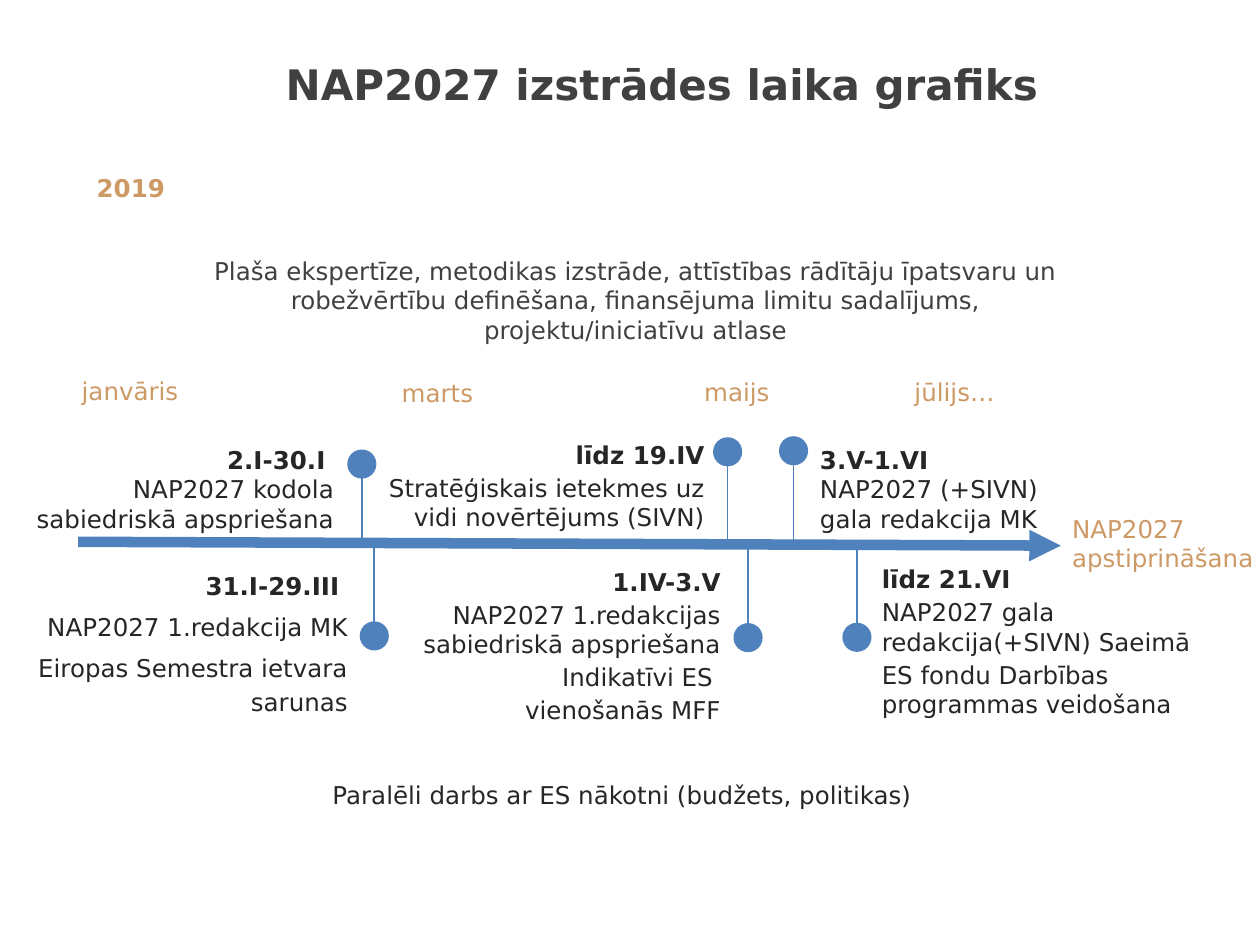
from dataclasses import dataclass

from lxml.etree import SubElement
from pptx import Presentation
from pptx.dml.color import RGBColor
from pptx.enum.shapes import MSO_CONNECTOR as Connector, MSO_SHAPE as Shape
from pptx.enum.text import MSO_AUTO_SIZE as AutoSize, PP_ALIGN as Align
from pptx.oxml.ns import qn
from pptx.util import Pt

COLORS = {"title": "404040", "body": "262626", "accent": "CD9965", "axis": "4F81BD"}
FONT = "DejaVu Sans"
AXIS_START = (44.6, 309.6)
AXIS_END = (606.2, 311.8)
DOT_SIZE = 14.4


@dataclass(frozen=True)
class Label:
    box: tuple[float, float, float, float]  # left, top, width, height
    paragraphs: tuple[str, ...]
    color: str = "body"
    align: Align = Align.LEFT
    size: float = 14
    bold_first: bool = False
    line_spacing: float = 1.0
    before: float = 0
    after: float = 0


@dataclass(frozen=True)
class Milestone:
    x: float
    dot_y: float
    label: Label


def milestone(x: float, dot_y: float, box: tuple, paragraphs: tuple, **style) -> Milestone:
    return Milestone(x, dot_y, Label(box, paragraphs, bold_first=True, **style))


MILESTONES = (
    milestone(206.8, 265.2, (3.6, 250.6, 194.4, 58.3),
              ("2.I-30.I ", "NAP2027 kodola sabiedriskā apspriešana"), align=Align.RIGHT),
    milestone(213.9, 363.4, (-0.7, 320.4, 206.6, 93.6),
              ("31.I-29.III ", "NAP2027 1.redakcija MK", "Eiropas Semestra ietvara sarunas"),
              align=Align.RIGHT, line_spacing=1.15, before=2, after=2),
    milestone(415.8, 258.2, (202.3, 247.7, 207.4, 60.5),
              ("līdz 19.IV", "Stratēģiskais ietekmes uz vidi novērtējums (SIVN)"),
              align=Align.RIGHT, before=2),
    milestone(427.5, 364.4, (181.4, 320.4, 237.6, 97.9),
              ("1.IV-3.V", "NAP2027 1.redakcijas sabiedriskā apspriešana",
               "Indikatīvi ES ", "vienošanās MFF"), align=Align.RIGHT, before=2),
    milestone(453.5, 257.6, (461.5, 250.6, 158.4, 58.3),
              ("3.V-1.VI", "NAP2027 (+SIVN) gala redakcija MK")),
    milestone(489.7, 364.2, (496.8, 319, 205.9, 96.5),
              ("līdz 21.VI", "NAP2027 gala redakcija(+SIVN) Saeimā",
               "ES fondu Darbības programmas veidošana"), before=2),
)

MONTHS = (("janvāris", 39.6, 209.5), ("marts", 222.5, 210.6),
          ("maijs", 395.3, 210.2), ("jūlijs…", 515.5, 210.2))

LABELS = (
    Label((156.2, 30.2, 527.8, 81.4), ("NAP2027 izstrādes laika grafiks",),
          "title", size=24, bold_first=True),
    Label((48.2, 93.6, 67, 24.5), ("2019",), "accent",
          bold_first=True, line_spacing=1.1, after=6),
    Label((115.2, 142.6, 496.1, 58.3),
          ("Plaša ekspertīze, metodikas izstrāde, attīstības rādītāju īpatsvaru un "
           "robežvērtību definēšana, finansējuma limitu sadalījums, "
           "projektu/iniciatīvu atlase",), "title", Align.CENTER),
    Label((605.5, 290.2, 121.7, 41), ("NAP2027 apstiprināšana",), "accent"),
    Label((182.9, 442.1, 414.7, 24.5),
          ("Paralēli darbs ar ES nākotni (budžets, politikas)",)),
    *(Label((left, top, 84.2, 24.5), (month,), "accent", line_spacing=1.1, after=6)
      for month, left, top in MONTHS),
)


def rgb(name: str) -> RGBColor:
    return RGBColor.from_string(COLORS[name])


def add_label(slide, label: Label) -> None:
    frame = slide.shapes.add_textbox(*map(Pt, label.box)).text_frame
    frame.word_wrap = True
    frame.auto_size = AutoSize.SHAPE_TO_FIT_TEXT
    for index, text in enumerate(label.paragraphs):
        paragraph = frame.add_paragraph() if index else frame.paragraphs[0]
        paragraph.alignment = label.align
        paragraph.line_spacing = label.line_spacing
        paragraph.space_before = Pt(label.before if index else 0)
        paragraph.space_after = Pt(label.after)
        run = paragraph.add_run()
        run.text = text
        run.font.name = FONT
        run.font.size = Pt(label.size)
        run.font.bold = label.bold_first and index == 0
        run.font.color.rgb = rgb(label.color)


def add_line(slide, start: tuple, end: tuple, width: float, arrow: bool = False) -> None:
    line = slide.shapes.add_connector(Connector.STRAIGHT, *map(Pt, (*start, *end)))
    line.line.color.rgb = rgb("axis")
    line.line.width = Pt(width)
    if arrow:
        SubElement(line.line._get_or_add_ln(), qn("a:tailEnd"), type="triangle")
    SubElement(line._element.spPr, qn("a:effectLst"))


def axis_y(x: float) -> float:
    """Height of the slightly sloping time axis at x."""
    (x0, y0), (x1, y1) = AXIS_START, AXIS_END
    return y0 + (y1 - y0) * (x - x0) / (x1 - x0)


def add_milestone(slide, item: Milestone) -> None:
    add_line(slide, (item.x, axis_y(item.x)), (item.x, item.dot_y), 1)
    radius = DOT_SIZE / 2
    dot = slide.shapes.add_shape(Shape.OVAL, Pt(item.x - radius), Pt(item.dot_y - radius),
                                 Pt(DOT_SIZE), Pt(DOT_SIZE))
    dot.shadow.inherit = False
    dot.fill.solid()
    dot.fill.fore_color.rgb = rgb("axis")
    dot.line.color.rgb = rgb("axis")
    dot.line.width = Pt(2.25)
    add_label(slide, item.label)


def main() -> None:
    deck = Presentation()
    deck.slide_width, deck.slide_height = Pt(720), Pt(540)
    slide = deck.slides.add_slide(deck.slide_layouts[6])
    add_line(slide, AXIS_START, AXIS_END, 6, arrow=True)
    for item in MILESTONES:
        add_milestone(slide, item)
    for label in LABELS:
        add_label(slide, label)
    deck.save("out.pptx")


if __name__ == "__main__":
    main()
